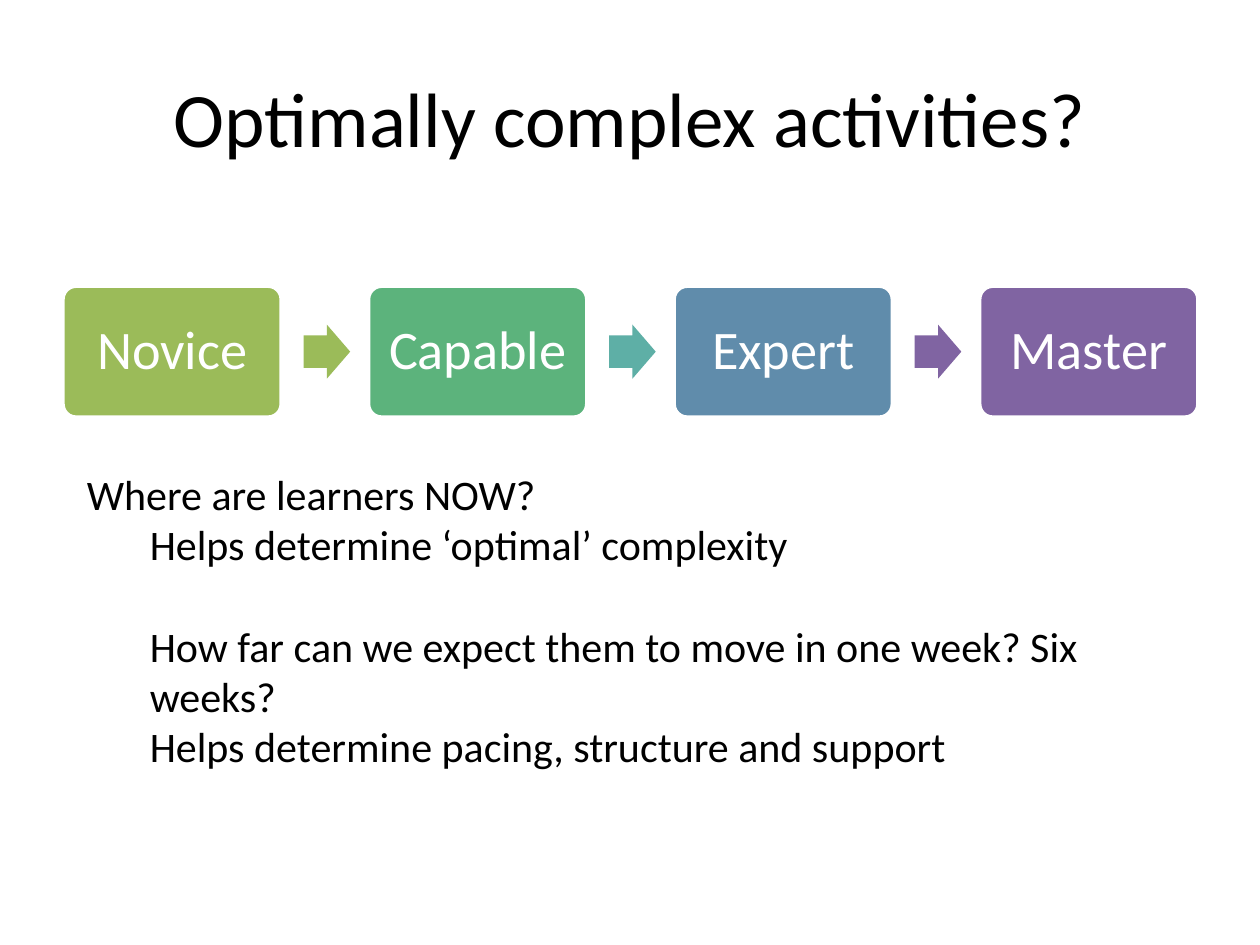
from pptx import Presentation
from pptx.dml.color import RGBColor
from pptx.enum.shapes import MSO_SHAPE
from pptx.enum.text import MSO_ANCHOR, PP_ALIGN
from pptx.util import Cm, Pt

ROUNDED = MSO_SHAPE.ROUNDED_RECTANGLE
ARROW = MSO_SHAPE.RIGHT_ARROW
MIDDLE, TOP = MSO_ANCHOR.MIDDLE, MSO_ANCHOR.TOP
CENTER, LEFT = PP_ALIGN.CENTER, PP_ALIGN.LEFT


def rgb(hex_color):
    return RGBColor.from_string(hex_color)


def write(paragraph, text, size=24, color="000000", font="Calibri",
          align=LEFT, before=0, spacing=1.0):
    """Fill a paragraph; a newline in the text becomes a line break."""
    paragraph.text = text
    paragraph.alignment = align
    paragraph.space_before = Pt(before)
    paragraph.line_spacing = spacing
    for run in paragraph.runs:
        run.font.name = font
        run.font.size = Pt(size)
        run.font.color.rgb = rgb(color)


class SlideBuilder:
    """Lengths are in centimetres."""

    def __init__(self, slide, font="Calibri", light="FFFFFF"):
        self.slide = slide
        self.font = font
        self.light = light

    def shape(self, kind, left, top, width, height, fill, adjustments):
        shape = self.slide.shapes.add_shape(
            kind, Cm(left), Cm(top), Cm(width), Cm(height))
        shape.shadow.inherit = False
        shape.fill.solid()
        shape.fill.fore_color.rgb = rgb(fill)
        shape.line.fill.background()
        for index, value in enumerate(adjustments):
            shape.adjustments[index] = value
        return shape

    def stage(self, name, left, top, width, height, fill):
        stage = self.shape(ROUNDED, left, top, width, height, fill, [0.1])
        stage.line.color.rgb = rgb(self.light)
        stage.line.width = Pt(2)
        frame = stage.text_frame
        frame.word_wrap = True
        frame.vertical_anchor = MIDDLE
        frame.margin_left = frame.margin_right = Cm(0.33)
        frame.margin_top = frame.margin_bottom = Cm(0.33)
        write(frame.paragraphs[0], name, size=31, color=self.light,
              font=self.font, align=CENTER, spacing=0.9)

    def arrow(self, left, top, width, height, fill):
        self.shape(ARROW, left, top, width, height, fill, [0.6, 0.5])

    def text_box(self, left, top, width, height, anchor=TOP):
        box = self.slide.shapes.add_textbox(
            Cm(left), Cm(top), Cm(width), Cm(height))
        box.text_frame.word_wrap = True
        box.text_frame.vertical_anchor = anchor
        return box.text_frame

    def title(self, text):
        frame = self.text_box(1.27, 0.76, 22.86, 3.18, MIDDLE)
        write(frame.paragraphs[0], text, size=44, font=self.font, align=CENTER)

    def outline(self, entries, left, top, width, height):
        """Write (text, level, space before in points) entries."""
        frame = self.text_box(left, top, width, height)
        for index, (text, level, before) in enumerate(entries):
            paragraph = frame.add_paragraph() if index else frame.paragraphs[0]
            paragraph.level = level
            write(paragraph, text, font=self.font, before=before)
            paragraph._p.get_or_add_pPr().set("marL", str(Cm(1.27 * level)))


def main():
    presentation = Presentation()
    presentation.slide_width, presentation.slide_height = Cm(25.4), Cm(19.05)
    builder = SlideBuilder(
        presentation.slides.add_slide(presentation.slide_layouts[6]))

    builder.title("Optimally complex activities?")

    stages = [  # name, stage fill, fill of the arrow that follows
        ("Novice", "9BBB59", "9BBB59"),
        ("Capable", "5CB37C", "5EAFA6"),
        ("Expert", "608CAB", "8064A2"),
        ("Master", "8064A2", None),
    ]
    first_left, top, pitch = 1.27, 5.77, 6.16
    stage_width, stage_height = 4.4, 2.64
    arrow_width, arrow_height, arrow_gap = 0.94, 1.09, 0.45
    arrow_top = top + (stage_height - arrow_height) / 2
    for index, (name, fill, arrow_fill) in enumerate(stages):
        left = first_left + index * pitch
        builder.stage(name, left, top, stage_width, stage_height, fill)
        if arrow_fill:
            builder.arrow(left + stage_width + arrow_gap, arrow_top,
                          arrow_width, arrow_height, arrow_fill)

    builder.outline([
        ("Where are learners NOW?", 0, 0),
        ("Helps determine ‘optimal’ complexity", 1, 0),
        ("How far can we expect them to move in one week? Six weeks?\n"
         "Helps determine pacing, structure and support", 1, 29),
    ], left=1.5, top=9.32, width=22.6, height=6.4)

    presentation.save("out.pptx")


if __name__ == "__main__":
    main()
